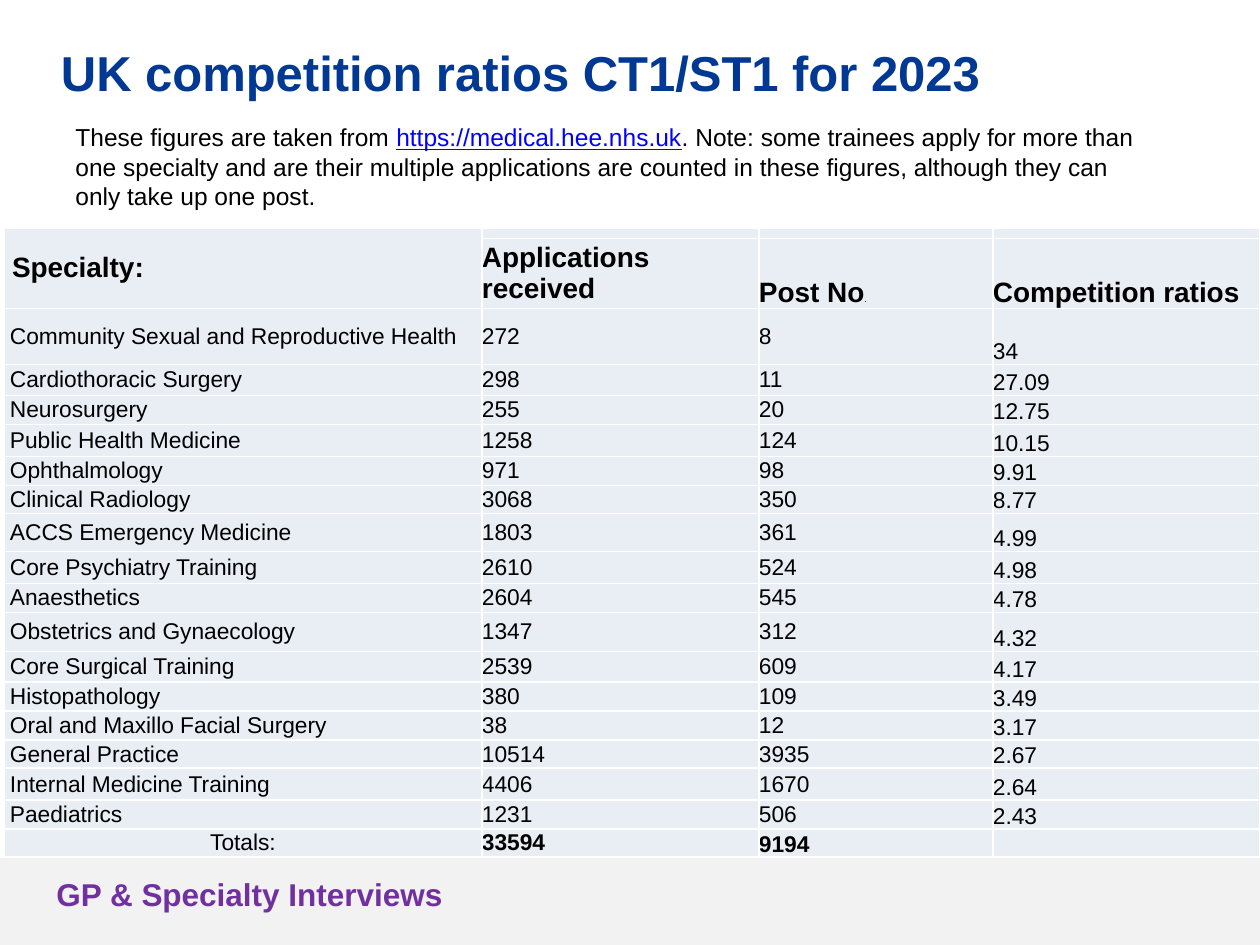
from lxml import etree
from pptx import Presentation
from pptx.dml.color import RGBColor
from pptx.enum.shapes import MSO_SHAPE
from pptx.enum.text import MSO_ANCHOR, PP_ALIGN
from pptx.oxml.ns import qn
from pptx.util import Pt

PX = 914400 // 126
MIDDLE, BOTTOM = MSO_ANCHOR.MIDDLE, MSO_ANCHOR.BOTTOM
CENTER = PP_ALIGN.CENTER
BLACK, WHITE, BLUE, PURPLE = "000000", "FFFFFF", "003893", "7030A0"
LINK_BLUE, CELL_FILL, FOOTER_FILL = "0000FF", "E9EDF4", "F2F2F2"


def write(paragraph, text, size=13, color=BLACK, bold=False, underline=False):
    """Append one formatted run to the paragraph."""
    run = paragraph.add_run()
    run.text = text
    run.font.name = "Arial"
    run.font.size = Pt(size)
    run.font.bold = bold
    run.font.underline = underline
    run.font.color.rgb = RGBColor.from_string(color)


def add_text_box(left, top, width, height):
    box = slide.shapes.add_textbox(left * PX, top * PX, width * PX, height * PX)
    box.text_frame.word_wrap = True
    return box.text_frame


presentation = Presentation()
presentation.slide_width = 1260 * PX
presentation.slide_height = 945 * PX
slide = presentation.slides.add_slide(presentation.slide_layouts[6])

# Footer band
footer = slide.shapes.add_shape(MSO_SHAPE.RECTANGLE, 0, 858 * PX, 1260 * PX, 87 * PX)
footer.shadow.inherit = False
footer.fill.solid()
footer.fill.fore_color.rgb = RGBColor.from_string(FOOTER_FILL)
footer.line.fill.background()
footer_text = add_text_box(44, 869, 525, 50)
write(footer_text.paragraphs[0], "GP & Specialty Interviews", size=18, color=PURPLE, bold=True)

# Title and introduction
title = add_text_box(-15, 30, 1071, 157)
title.margin_top = 12 * PX
title.paragraphs[0].alignment = CENTER
write(title.paragraphs[0], "UK competition ratios CT1/ST1 for 2023", size=28, color=BLUE, bold=True)

introduction = add_text_box(63, 116, 1090, 140).paragraphs[0]
write(introduction, "These figures are taken from ", size=14)
write(introduction, "https://medical.hee.nhs.uk", size=14, color=LINK_BLUE, underline=True)
write(
    introduction,
    ". Note: some trainees apply for more than one specialty and are their multiple "
    "applications are counted in these figures, although they can only take up one post.",
    size=14,
)

# Competition table
rows = [
    ("Specialty:", "", "", ""),
    ("", "Applications received", "Post No", "Competition ratios"),
    ("Community Sexual and Reproductive Health", "272", "8", "34"),
    ("Cardiothoracic Surgery", "298", "11", "27.09"),
    ("Neurosurgery", "255", "20", "12.75"),
    ("Public Health Medicine", "1258", "124", "10.15"),
    ("Ophthalmology", "971", "98", "9.91"),
    ("Clinical Radiology", "3068", "350", "8.77"),
    ("ACCS Emergency Medicine", "1803", "361", "4.99"),
    ("Core Psychiatry Training", "2610", "524", "4.98"),
    ("Anaesthetics", "2604", "545", "4.78"),
    ("Obstetrics and Gynaecology", "1347", "312", "4.32"),
    ("Core Surgical Training", "2539", "609", "4.17"),
    ("Histopathology", "380", "109", "3.49"),
    ("Oral and Maxillo Facial Surgery", "38", "12", "3.17"),
    ("General Practice", "10514", "3935", "2.67"),
    ("Internal Medicine Training", "4406", "1670", "2.64"),
    ("Paediatrics", "1231", "506", "2.43"),
    ("Totals:", "33594", "9194", ""),
]
row_heights = [10, 70, 56, 31, 29, 32, 29, 28, 38, 32, 29, 39, 31, 29, 29, 28, 32, 29, 28]
column_widths = [478, 277, 234, 267]
totals_row = len(rows) - 1

table = slide.shapes.add_table(
    len(rows), len(column_widths), 4 * PX, 228 * PX, sum(column_widths) * PX, sum(row_heights) * PX
).table
table.first_row = False
table.horz_banding = False
for column, width in zip(table.columns, column_widths):
    column.width = width * PX
for row, height in zip(table.rows, row_heights):
    row.height = height * PX

for row_index, values in enumerate(rows):
    is_header = row_index < 2
    is_total = row_index == totals_row
    for column_index, value in enumerate(values):
        cell = table.cell(row_index, column_index)
        cell.margin_left = cell.margin_right = cell.margin_top = cell.margin_bottom = 0
        if column_index == 0 and not is_total:
            cell.margin_left = (8 if is_header else 6) * PX
        at_bottom = column_index == 3 or (column_index == 2 and (is_header or is_total))
        cell.vertical_anchor = BOTTOM if at_bottom else MIDDLE

        properties = cell._tc.get_or_add_tcPr()
        for side in ("a:lnL", "a:lnR", "a:lnT", "a:lnB"):
            border = etree.SubElement(properties, qn(side), w=str(Pt(1)))
            border_fill = etree.SubElement(border, qn("a:solidFill"))
            etree.SubElement(border_fill, qn("a:srgbClr"), val=WHITE)
        cell.fill.solid()
        cell.fill.fore_color.rgb = RGBColor.from_string(CELL_FILL)

        paragraph = cell.text_frame.paragraphs[0]
        if value:
            bold = is_header or (is_total and column_index > 0)
            write(paragraph, value, size=16 if is_header else 13, bold=bold)
        else:
            etree.SubElement(paragraph._p, qn("a:endParaRPr"), sz="500")

table.cell(0, 0).merge(table.cell(1, 0))
write(table.cell(1, 2).text_frame.paragraphs[0], ".", size=5)
table.cell(totals_row, 0).text_frame.paragraphs[0].alignment = CENTER

presentation.save("out.pptx")
